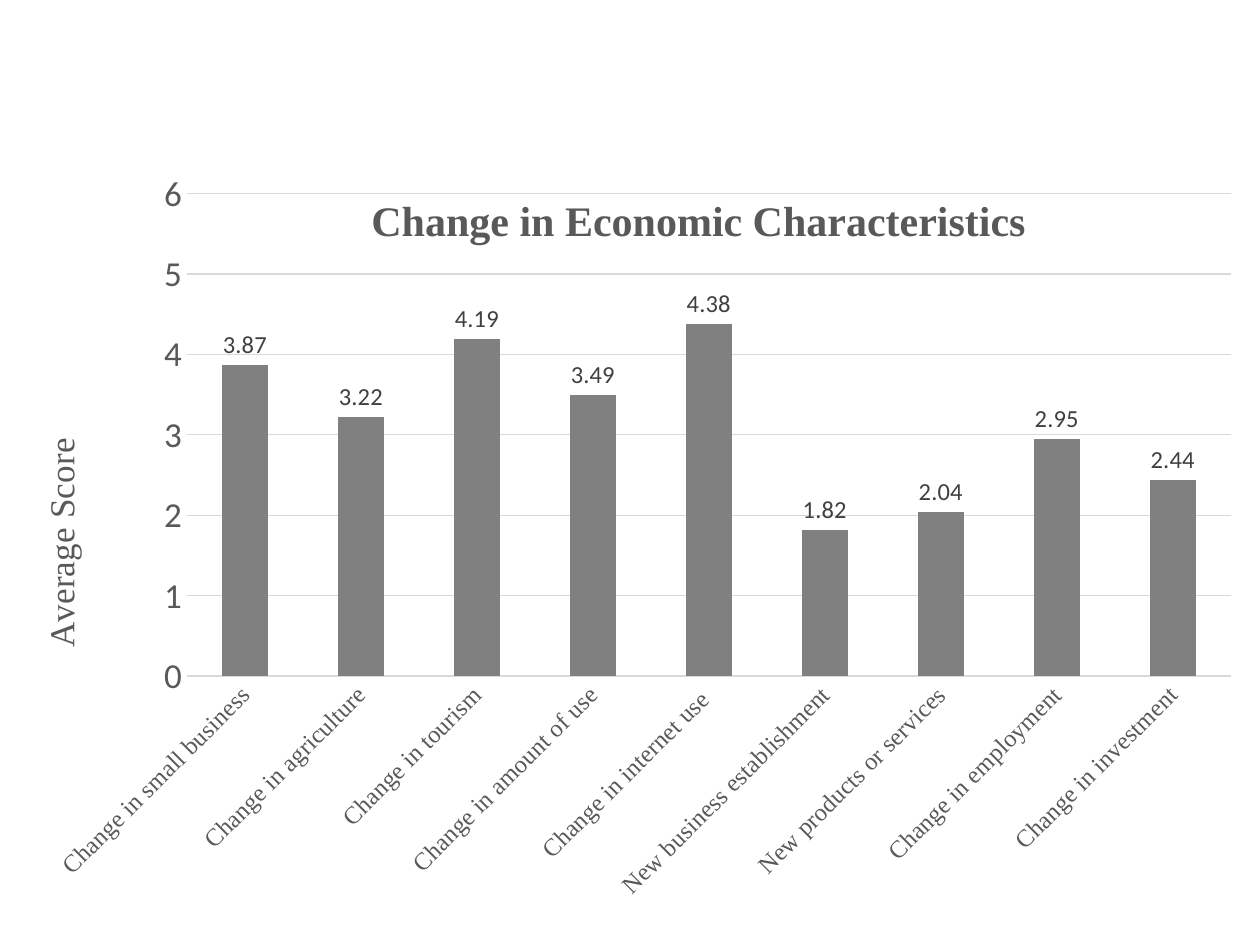
from lxml import etree
from pptx import Presentation
from pptx.chart.data import CategoryChartData
from pptx.dml.color import RGBColor
from pptx.enum.chart import XL_CHART_TYPE, XL_LABEL_POSITION, XL_TICK_MARK
from pptx.oxml.ns import qn
from pptx.util import Pt

COLUMNS = XL_CHART_TYPE.COLUMN_CLUSTERED
OUTSIDE_END = XL_LABEL_POSITION.OUTSIDE_END
NO_TICK = XL_TICK_MARK.NONE

HEADING = "Change in Economic Characteristics"
SCORE_TITLE = "Average Score"
SCORES = [
    ("Change in small business", 3.87),
    ("Change in agriculture", 3.22),
    ("Change in tourism", 4.19),
    ("Change in amount of use", 3.49),
    ("Change in internet use ", 4.38),
    ("New business establishment", 1.82),
    ("New products or services", 2.04),
    ("Change in employment", 2.95),
    ("Change in investment", 2.44),
]
SERIF, SANS = "Times New Roman", "Calibri"
GRAY = "595959"
SLIDE_SIZE = (1260, 945)
CHART_BOX = (20, 163, 1228, 747)


def px(length):
    return round(length * 914400 / 126)


def color(value):
    return RGBColor.from_string(value)


def style(font, name, size, shade, bold=False):
    font.name, font.size, font.bold = name, Pt(size), bold
    font.color.rgb = color(shade)


def place(parent, index, inner=False, **fractions):
    for old in parent.findall(qn("c:layout")):
        parent.remove(old)
    layout = etree.Element(qn("c:layout"))
    manual = etree.SubElement(layout, qn("c:manualLayout"))
    settings = {"layoutTarget": "inner"} if inner else {}
    settings.update(xMode="edge", yMode="edge", **fractions)
    for tag, value in settings.items():
        etree.SubElement(manual, qn("c:" + tag)).set("val", str(value))
    parent.insert(index, layout)


def write_title(title, text, size, bold, x, y):
    title.text_frame.text = text
    style(title.text_frame.paragraphs[0].font, SERIF, size, GRAY, bold)
    element = title._element
    place(element, 1, x=x, y=y)
    overlay = element.find(qn("c:overlay"))
    if overlay is None:
        overlay = etree.Element(qn("c:overlay"))
        element.insert(2, overlay)
    overlay.set("val", "1")


def style_axis(axis, font_name, size):
    axis.major_tick_mark = axis.minor_tick_mark = NO_TICK
    axis.format.line.fill.background()
    style(axis.tick_labels.font, font_name, size, GRAY)


def add_scores(slide):
    data = CategoryChartData(number_format="0.00")
    data.categories = [name for name, _ in SCORES]
    data.add_series("Series 1", [score for _, score in SCORES])
    chart = slide.shapes.add_chart(COLUMNS, *map(px, CHART_BOX), data).chart
    chart.has_legend = False
    style(chart.font, SANS, 10, "000000")
    write_title(chart.chart_title, HEADING, 24, True, 0.28, 0.03)
    place(chart._chartSpace.chart.plotArea, 0, inner=True,
          x=0.136, y=0.041, w=0.85, h=0.646)

    style_axis(chart.category_axis, SERIF, 14)
    category_text = chart.category_axis._element.find(qn("c:txPr"))
    category_text.find(qn("a:bodyPr")).set("rot", str(-45 * 60000))

    score_axis = chart.value_axis
    style_axis(score_axis, SANS, 20)
    score_axis.minimum_scale, score_axis.maximum_scale = 0, 6
    score_axis.major_unit = 1
    score_axis.tick_labels.number_format = "0"
    score_axis.tick_labels.number_format_is_linked = False
    grid = score_axis.major_gridlines.format.line
    grid.color.rgb, grid.width = color("D9D9D9"), Pt(0.75)
    write_title(score_axis.axis_title, SCORE_TITLE, 20, False, 0.01, 0.36)
    score_text = score_axis.axis_title.text_frame._txBody
    score_text.find(qn("a:bodyPr")).set("rot", str(-90 * 60000))

    plot = chart.plots[0]
    plot.gap_width, plot.vary_by_categories = 150, False
    bars = plot.series[0]
    bars.format.fill.solid()
    bars.format.fill.fore_color.rgb = color("808080")
    labels = bars.data_labels
    labels.show_value, labels.position = True, OUTSIDE_END
    labels.number_format, labels.number_format_is_linked = "0.00", False
    style(labels.font, SANS, 14, "404040")


def main():
    deck = Presentation()
    deck.slide_width, deck.slide_height = map(px, SLIDE_SIZE)
    add_scores(deck.slides.add_slide(deck.slide_layouts[6]))
    deck.save("out.pptx")


if __name__ == "__main__":
    main()
